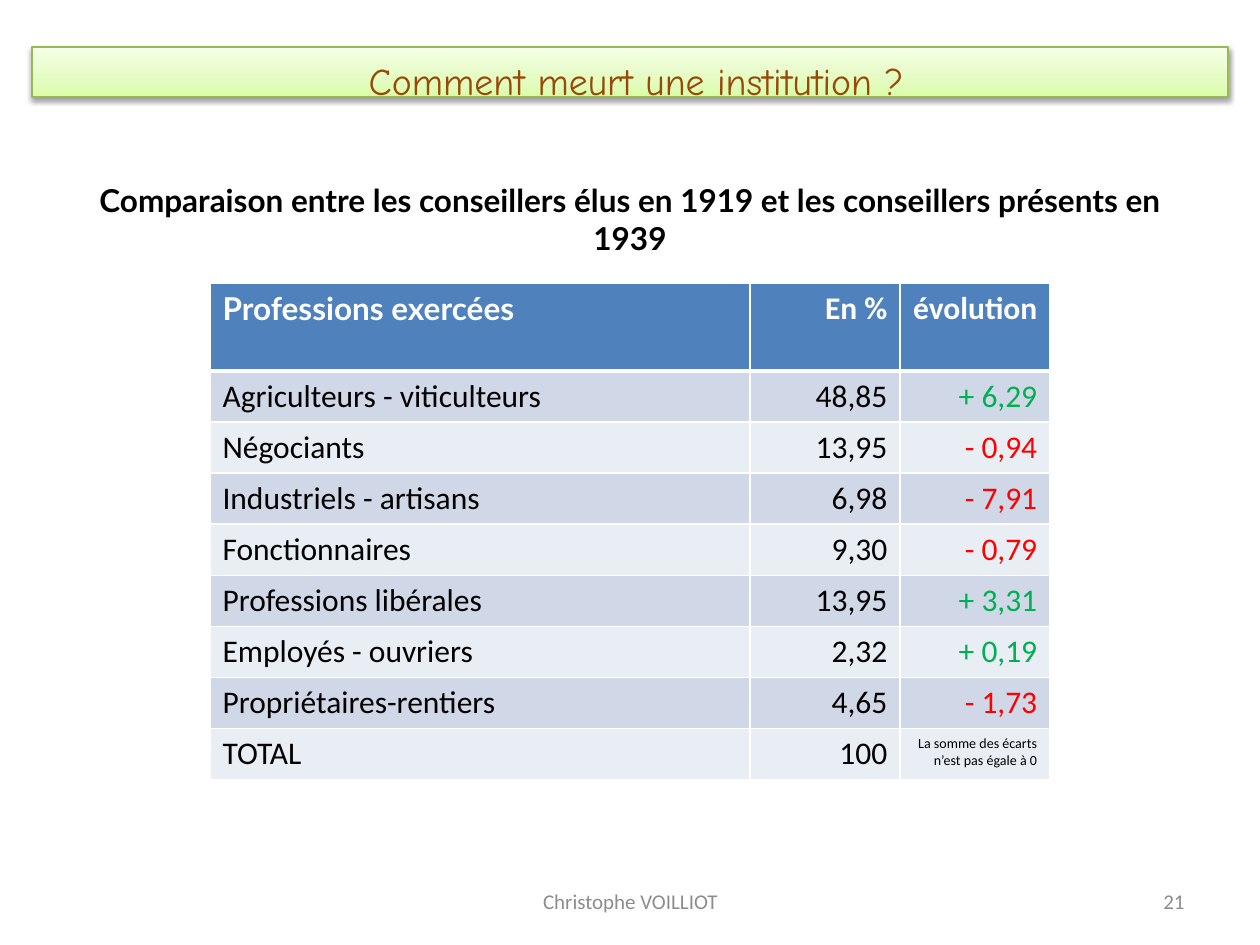
from dataclasses import dataclass

from pptx import Presentation
from pptx.dml.color import RGBColor
from pptx.enum.text import MSO_ANCHOR, MSO_AUTO_SIZE, PP_ALIGN
from pptx.oxml import parse_xml
from pptx.oxml.ns import nsdecls
from pptx.util import Emu, Pt

PX_PER_INCH = 126
WHITE = RGBColor(0xFF, 0xFF, 0xFF)
BLACK = RGBColor(0, 0, 0)
BROWN = RGBColor(0x98, 0x48, 0x07)
OLIVE = RGBColor(0x98, 0xB9, 0x55)
GRAY = RGBColor(0x8C, 0x8C, 0x8C)
BLUE = RGBColor(0x4F, 0x81, 0xBD)
BAND_DARK = RGBColor(0xD0, 0xD8, 0xE8)
BAND_LIGHT = RGBColor(0xE9, 0xED, 0xF4)
GREEN = RGBColor(0x00, 0xB0, 0x50)
RED = RGBColor(0xFF, 0, 0)
TITLE_STOPS = [(0, RGBColor(0xDA, 0xFD, 0xA7)),
               (35, RGBColor(0xE4, 0xFC, 0xC2)),
               (100, RGBColor(0xF5, 0xFF, 0xE7))]


@dataclass
class Box:
    x: int
    y: int
    w: int
    h: int


@dataclass
class Profession:
    name: str
    share: str
    change: str


@dataclass
class Footer:
    text: str
    box: Box
    align: PP_ALIGN


COL_WIDTHS = [540, 150, 150]
HEADER_H, ROW_H = 88, 51
HEADER = Profession("Professions exercées", "En %", "évolution")
PROFESSIONS = [
    Profession("Agriculteurs - viticulteurs", "48,85", "+ 6,29"),
    Profession("Négociants", "13,95", "- 0,94"),
    Profession("Industriels - artisans", "6,98", "- 7,91"),
    Profession("Fonctionnaires", "9,30", "- 0,79"),
    Profession("Professions libérales", "13,95", "+ 3,31"),
    Profession("Employés - ouvriers", "2,32", "+ 0,19"),
    Profession("Propriétaires-rentiers", "4,65", "- 1,73"),
    Profession("TOTAL", "100", "La somme des écarts n’est pas égale à 0"),
]
FOOTERS = [
    Footer("Christophe VOILLIOT", Box(431, 876, 399, 50), PP_ALIGN.CENTER),
    Footer("21", Box(903, 876, 294, 50), PP_ALIGN.RIGHT),
]


def px(n: int) -> Emu:
    return Emu(round(n * 914400 / PX_PER_INCH))


def place(sp, box: Box) -> None:
    sp.left, sp.top, sp.width, sp.height = map(px, (box.x, box.y, box.w, box.h))


def write(tf, text: str, align: PP_ALIGN, color: RGBColor, **font):
    """Fill the first paragraph with one formatted run."""
    p = tf.paragraphs[0]
    p.alignment = align
    r = p.add_run()
    r.text = text
    r.font.color.rgb = color
    for name, value in font.items():
        setattr(r.font, name, value)
    return p


def style_title(sp) -> None:
    """Vertical gradient, thin outline and soft shadow below."""
    stops = "".join(f'<a:gs pos="{pos * 1000}"><a:srgbClr val="{color}"/></a:gs>'
                    for pos, color in TITLE_STOPS)
    sp_pr = sp.element.spPr
    sp_pr.append(parse_xml(
        f'<a:gradFill {nsdecls("a")} rotWithShape="1"><a:gsLst>{stops}</a:gsLst>'
        '<a:lin ang="16200000" scaled="0"/></a:gradFill>'))
    sp.line.color.rgb = OLIVE
    sp.line.width = Pt(0.75)
    sp_pr.append(parse_xml(
        f'<a:effectLst {nsdecls("a")}><a:outerShdw blurRad="{Pt(3.1)}" '
        f'dist="{Pt(1.6)}" dir="5400000" rotWithShape="0"><a:srgbClr val="000000">'
        '<a:alpha val="38000"/></a:srgbClr></a:outerShdw></a:effectLst>'))


def set_borders(cell, top: int, bottom: int) -> None:
    tc_pr = cell._tc.get_or_add_tcPr()
    for i, (side, width) in enumerate([("L", 1), ("R", 1), ("T", top), ("B", bottom)]):
        tc_pr.insert(i, parse_xml(
            f'<a:ln{side} {nsdecls("a")} w="{Pt(width)}"><a:solidFill>'
            f'<a:srgbClr val="{WHITE}"/></a:solidFill></a:ln{side}>'))


def change_color(text: str) -> RGBColor:
    return {"+": GREEN, "-": RED}.get(text[0], BLACK)


def add_professions(slide, x: int, y: int) -> None:
    rows = [HEADER, *PROFESSIONS]
    height = HEADER_H + ROW_H * len(PROFESSIONS)
    table = slide.shapes.add_table(len(rows), len(COL_WIDTHS), px(x), px(y),
                                   px(sum(COL_WIDTHS)), px(height)).table
    for col, width in zip(table.columns, COL_WIDTHS):
        col.width = px(width)
    for i, row in enumerate(rows):
        is_header = i == 0
        table.rows[i].height = px(HEADER_H if is_header else ROW_H)
        band = BLUE if is_header else (BAND_DARK if i % 2 else BAND_LIGHT)
        for j, text in enumerate((row.name, row.share, row.change)):
            cell = table.cell(i, j)
            cell.fill.solid()
            cell.fill.fore_color.rgb = band
            set_borders(cell, 3 if i == 1 else 1, 3 if is_header else 1)
            color = WHITE if is_header else change_color(text) if j == 2 else BLACK
            is_note = row is rows[-1] and j == 2
            write(cell.text_frame, text, PP_ALIGN.RIGHT if j else PP_ALIGN.LEFT, color,
                  name="Lato" if is_header and j == 0 else "Calibri",
                  size=Pt(8 if is_note else 18), bold=is_header)


def add_footer(slide, footer: Footer) -> None:
    sp = slide.shapes.add_textbox(0, 0, 0, 0)
    place(sp, footer.box)
    tf = sp.text_frame
    tf.word_wrap = True
    tf.vertical_anchor = MSO_ANCHOR.MIDDLE
    write(tf, footer.text, footer.align, GRAY, name="Calibri", size=Pt(12))


def main() -> None:
    prs = Presentation()
    prs.slide_width, prs.slide_height = px(1260), px(945)
    slide = prs.slides.add_slide(prs.slide_layouts[1])

    # Title banner
    title = slide.shapes.title
    place(title, Box(32, 47, 1196, 50))
    style_title(title)
    tf = title.text_frame
    for name, value in {"auto_size": MSO_AUTO_SIZE.NONE, "margin_top": px(11),
                        "margin_bottom": 0, "vertical_anchor": MSO_ANCHOR.TOP}.items():
        setattr(tf, name, value)
    write(tf, " Comment meurt une institution ?", PP_ALIGN.CENTER, BROWN,
          name="Comic Neue", size=Pt(21.6))

    # Heading above the table
    body = slide.placeholders[1]
    place(body, Box(63, 175, 1134, 624))
    body.text_frame.auto_size = MSO_AUTO_SIZE.NONE
    p = write(body.text_frame,
              "Comparaison entre les conseillers élus en 1919 et les conseillers présents en 1939",
              PP_ALIGN.CENTER, BLACK, name="Lato", size=Pt(18), bold=True)
    p_pr = p._p.get_or_add_pPr()
    p_pr.set("marL", "0")
    p_pr.set("indent", "0")
    p_pr.append(parse_xml(f'<a:buNone {nsdecls("a")}/>'))

    # Table and footers
    add_professions(slide, 210, 283)
    for footer in FOOTERS:
        add_footer(slide, footer)

    prs.save("out.pptx")


if __name__ == "__main__":
    main()
